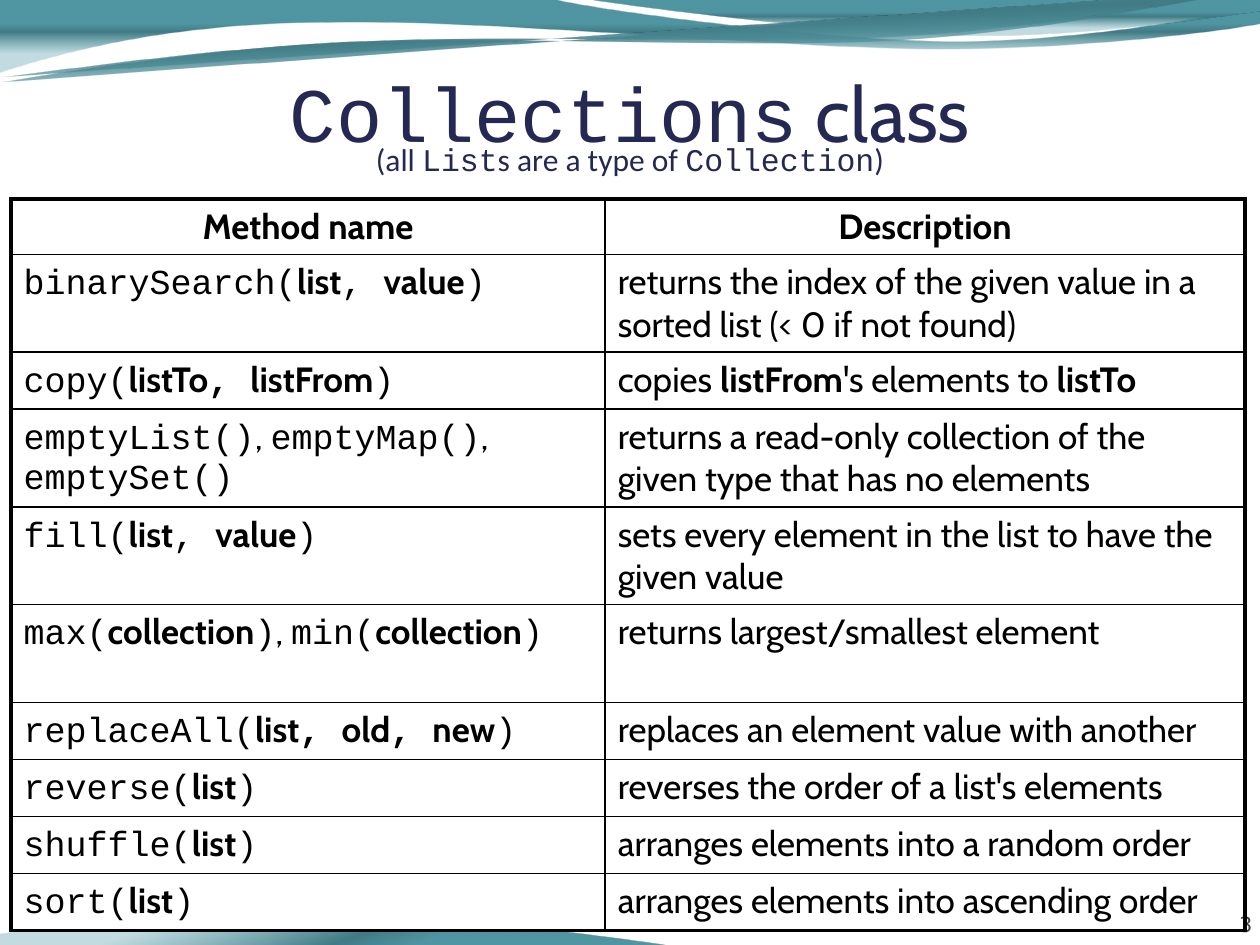
import math

import pptx
import pptx.dml.color
import pptx.enum.text
import pptx.oxml
import pptx.oxml.ns
import pptx.util
from lxml import etree

Cm, Pt, qn = pptx.util.Cm, pptx.util.Pt, pptx.oxml.ns.qn
ALIGN = pptx.enum.text.PP_ALIGN
BOTTOM = pptx.enum.text.MSO_ANCHOR.BOTTOM
NAVY, BLACK, WHITE, GREY = "242852", "000000", "FFFFFF", "424242"
BODY, MONO = "Cabin", "Courier New"

# Content: text spans are (text, font, bold)
TITLE = [("Collections", MONO, False), (" class", BODY, False)]
SUBTITLE = [("(all ", "Calibri", False), ("List", MONO, False),
            ("s are a type of ", "Calibri", False), ("Collection", MONO, False),
            (")", "Calibri", False)]


def code(text):
    return text, MONO, False


def bold(text, font=BODY):
    return text, font, True


def plain(text):
    return text, BODY, False


COMMA, BOLD_COMMA, CLOSE = code(", "), bold(", ", MONO), code(")")
LIST, VALUE, COLLECTION = bold("list"), bold("value"), bold("collection")
HEADER, SHORT, TALL = 1.12, 1.15, 1.97  # row heights in cm

ROWS = [
    (HEADER, [bold("Method name")], [bold("Description")]),
    (TALL, [code("binarySearch("), LIST, COMMA, VALUE, CLOSE],
     [plain("returns the index of the given value in a sorted list (< 0 if not found)")]),
    (SHORT, [code("copy("), bold("listTo"), BOLD_COMMA, bold("listFrom"), CLOSE],
     [plain("copies "), bold("listFrom"), plain("'s elements to "), bold("listTo")]),
    (TALL, [code("emptyList()"), plain(", "), code("emptyMap()"), plain(", \n"),
            code("emptySet()")],
     [plain("returns a read-only collection of the given type that has no elements")]),
    (TALL, [code("fill("), LIST, COMMA, VALUE, CLOSE],
     [plain("sets every element in the list to have the given value")]),
    (TALL, [code("max("), COLLECTION, CLOSE, plain(", "), code("min("), COLLECTION, CLOSE],
     [plain("returns largest/smallest element")]),
    (SHORT, [code("replaceAll("), LIST, BOLD_COMMA, bold("old"), BOLD_COMMA, bold("new"), CLOSE],
     [plain("replaces an element value with another")]),
    (SHORT, [code("reverse("), LIST, CLOSE],
     [plain("reverses the order of a list's elements")]),
    (SHORT, [code("shuffle("), LIST, CLOSE],
     [plain("arranges elements into a random order")]),
    (SHORT, [code("sort("), LIST, CLOSE],
     [plain("arranges elements into ascending order")]),
]
COLUMNS = [11.98, 12.9]

# Waves in cm: rotation, gradient angle, closed, start,
# then lines (x, y) or cubic curves (two controls, end)
WAVES = [
    (0, 90, True, (0, 0),
     [(11.18, 0), (12.09, 0.23, 16.87, 0.84, 19.25, 0.84),
      (21.67, 0.84, 24.33, 0.36, 25.4, 0.13), (25.43, 0.48),
      (24.97, 0.58, 22.1, 0.99, 18.95, 0.99), (15.8, 0.99, 9.7, 0.38, 6.53, 0.46),
      (3.28, 0.48, 1.17, 1.09, -0.03, 1.47), (0, 0)]),
    (0, 90, True, (11.86, 0),
     [(12.65, 0.13, 17.12, 0.69, 19.38, 0.71),
      (21.64, 0.76, 24.41, 0.36, 25.4, 0.23), (25.4, 0), (11.86, 0)]),
    (-2.7, 90, False, (0.03, 1.65),
     [(1.27, 1.45, 4.06, 0.99, 7.09, 0.86), (10.11, 0.71, 15.06, 0.99, 18.14, 0.81),
      (21.18, 0.64, 23.9, 0, 25.4, -0.2)]),
    (-2.7, 90, False, (0.03, 1.55),
     [(1.24, 1.42, 4.22, 0.97, 7.24, 0.84), (10.26, 0.69, 15.16, 0.91, 18.19, 0.74),
      (21.23, 0.56, 23.9, -0.03, 25.4, -0.2)]),
    (180, 70, True, (13.51, 19.05),
     [(12.73, 18.92, 8.26, 18.36, 5.99, 18.34), (3.73, 18.29, 0.97, 18.69, -0.03, 18.82),
      (-0.03, 19.05), (13.51, 19.05)]),
]
STOPS = [(33, "5096A2", 100), (44, "417B85", 100), (74, "5AA2AE", 37)]


def rgb(value):
    return pptx.dml.color.RGBColor.from_string(value)


def write(paragraph, spans, size, color, align=ALIGN.LEFT):
    paragraph.alignment = align
    paragraph.font.size = Pt(size)
    paragraph.font.color.rgb = rgb(color)
    for text, font, is_bold in spans:
        span = paragraph.add_run()
        span.text = text.rstrip("\n")
        span.font.name, span.font.bold = font, is_bold
        if text.endswith("\n"):
            paragraph.add_line_break()


def add_text(page, place, spans, size, color, align, top_inset=0.13):
    box = page.shapes.add_textbox(*map(Cm, place))
    frame = box.text_frame
    frame.word_wrap = True
    frame.vertical_anchor = BOTTOM
    frame.margin_left = frame.margin_right = frame.margin_bottom = 0
    frame.margin_top = Cm(top_inset)
    write(frame.paragraphs[0], spans, size, color, align)


def turn_back(points, rotation):
    """Points before the shape is rotated about its middle."""
    middle_x, middle_y = ((min(values) + max(values)) / 2 for values in zip(*points))
    cosine, sine = math.cos(math.radians(rotation)), math.sin(math.radians(rotation))
    return [(Cm(middle_x + (x - middle_x) * cosine + (y - middle_y) * sine),
             Cm(middle_y - (x - middle_x) * sine + (y - middle_y) * cosine))
            for x, y in points]


def add_wave(page, rotation, angle, closed, start, segments):
    points = [start] + [pair for part in segments for pair in zip(part[::2], part[1::2])]
    first, *others = turn_back(points, rotation)
    builder = page.shapes.build_freeform(*first)
    builder.add_line_segments(others, close=closed)
    wave = builder.convert_to_shape()
    wave.rotation = rotation
    wave.shadow.inherit = False
    wave.line.fill.background()

    # Join the three points of each curve into one Bezier segment
    geometry = wave.element.spPr.find(qn("a:custGeom"))
    lines = iter(list(geometry.iter(qn("a:lnTo"))))
    for part in segments:
        line = next(lines)
        if len(part) == 6:
            curve = etree.Element(qn("a:cubicBezTo"))
            line.addprevious(curve)
            for piece in (line, next(lines), next(lines)):
                curve.append(piece[0])
                piece.getparent().remove(piece)

    stops = "".join(
        f'<a:gs pos="{place * 1000}"><a:srgbClr val="{color}">'
        f'<a:alpha val="{alpha * 1000}"/></a:srgbClr></a:gs>' for place, color, alpha in STOPS)
    geometry.addnext(pptx.oxml.parse_xml(
        f'<a:gradFill {pptx.oxml.ns.nsdecls("a")} rotWithShape="1"><a:gsLst>{stops}</a:gsLst>'
        f'<a:lin ang="{angle * 60000}" scaled="0"/></a:gradFill>'))


def set_borders(cell, widths):
    properties = cell._tc.get_or_add_tcPr()
    for side, width in zip("LRTB", widths):
        line = etree.SubElement(properties, qn(f"a:ln{side}"), w=str(Pt(width)))
        fill = etree.SubElement(line, qn("a:solidFill"))
        etree.SubElement(fill, qn("a:srgbClr"), val=BLACK)


def add_method_table(page):
    heights = [row[0] for row in ROWS]
    table = page.shapes.add_table(len(ROWS), len(COLUMNS), Cm(0.22), Cm(4.01),
                                  Cm(sum(COLUMNS)), Cm(sum(heights))).table
    table.first_row = table.horz_banding = False
    for column, width in zip(table.columns, COLUMNS):
        column.width = Cm(width)
    last_row, last_column = len(ROWS) - 1, len(COLUMNS) - 1
    for r, (height, *texts) in enumerate(ROWS):
        table.rows[r].height = Cm(height)
        for c, spans in enumerate(texts):
            cell = table.cell(r, c)
            outer = c == 0, c == last_column, r == 0, r == last_row
            set_borders(cell, [2.25 if edge else 1 for edge in outer])
            if (r, c) == (last_row, last_column):
                cell.fill.background()  # lets the page number show
            else:
                cell.fill.solid()
                cell.fill.fore_color.rgb = rgb(WHITE)
            write(cell.text_frame.paragraphs[0], spans, 20, BLACK,
                  ALIGN.CENTER if r == 0 else ALIGN.LEFT)


def main():
    deck = pptx.Presentation()
    deck.slide_width, deck.slide_height = Cm(25.4), Cm(19.05)
    page = deck.slides.add_slide(deck.slide_layouts[6])
    # Page number and decoration
    add_text(page, (23.14, 17.86, 2.11, 1.02), [("3", "DejaVu Sans", False)],
             12, GREY, ALIGN.RIGHT, top_inset=0)
    for wave in WAVES:
        add_wave(page, *wave)
    # Heading and table
    add_text(page, (1.27, 1.22, 22.86, 1.96), TITLE, 44, NAVY, ALIGN.CENTER)
    add_method_table(page)
    add_text(page, (1.27, 2.77, 22.86, 0.81), SUBTITLE, 18, NAVY, ALIGN.CENTER)
    deck.save("out.pptx")


if __name__ == "__main__":
    main()
